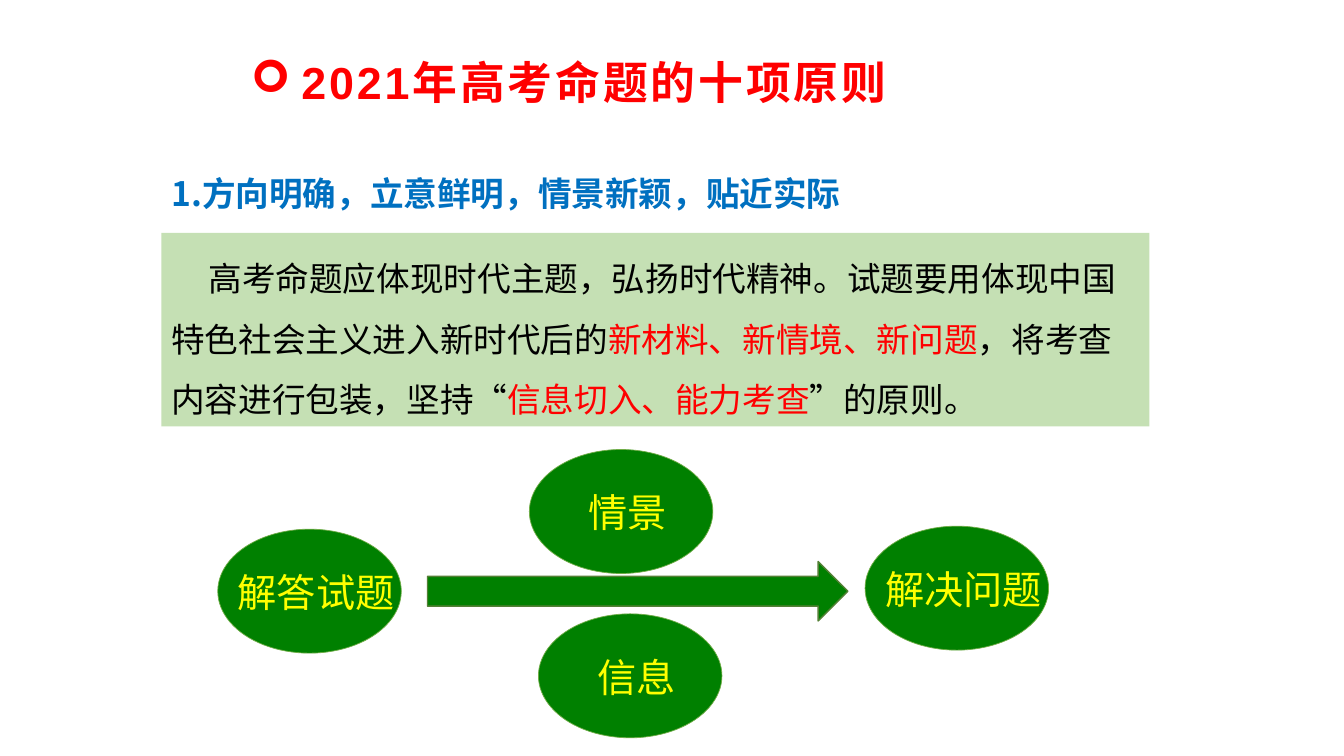
from lxml import etree
from pptx import Presentation
from pptx.dml.color import RGBColor
from pptx.enum.shapes import MSO_SHAPE as SHAPE
from pptx.enum.text import MSO_ANCHOR as ANCHOR, PP_ALIGN as ALIGN
from pptx.oxml.ns import qn
from pptx.util import Inches, Pt

RED = RGBColor(0xFF, 0x00, 0x00)
BLUE = RGBColor(0x00, 0x70, 0xC0)
BLACK = RGBColor(0x00, 0x00, 0x00)
YELLOW = RGBColor(0xFF, 0xFF, 0x00)
GREEN = RGBColor(0x00, 0x80, 0x00)
PALE_GREEN = RGBColor(0xC5, 0xE0, 0xB4)
OVAL_LINE = RGBColor(0x70, 0xAD, 0x47)
ARROW_LINE = RGBColor(0x53, 0x80, 0x35)
CJK = "Noto Sans CJK SC"

# Content
TITLE = "2021年高考命题的十项原则"
HEADING = "1.方向明确，立意鲜明，情景新颖，贴近实际"
BODY = [
    ("高考命题应体现时代主题，弘扬时代精神。试题要用体现中国特色社会主义进入新时代后的", BLACK),
    ("新材料、新情境、新问题", RED),
    ("，将考查内容进行包装，坚持“", BLACK),
    ("信息切入、能力考查", RED),
    ("”的原则。", BLACK),
]
OVAL_W, OVAL_H = 1.82, 1.23
# label, oval left, oval top, label offset from the oval, label width
OVALS = [
    ("情景", 5.25, 4.46, 0.49, 1.06),
    ("解答试题", 2.16, 5.25, 0.1, 1.85),
    ("解决问题", 8.58, 5.22, 0.1, 1.85),
    ("信息", 5.34, 6.09, 0.49, 1.06),
]


def style(r, size, color, font=CJK, bold=False):
    r.font.size, r.font.bold, r.font.name = Pt(size), bold, font
    r.font.color.rgb = color
    etree.SubElement(r.font._element, qn("a:ea"), typeface=CJK)


def add_text(shapes, box, text, size, color, **kw):
    tf = shapes.add_textbox(*map(Inches, box)).text_frame
    tf.word_wrap = True
    p = tf.paragraphs[0]
    p.text = text
    style(p.runs[0], size, color, **kw)
    return tf


def add_filled(shapes, kind, box, fill, line=None, width=1):
    sp = shapes.add_shape(kind, *map(Inches, box))
    sp.shadow.inherit = False
    sp.fill.solid()
    sp.fill.fore_color.rgb = fill
    if line is None:
        sp.line.fill.background()
    else:
        sp.line.color.rgb = line
        sp.line.width = Pt(width)
    return sp


prs = Presentation()
prs.slide_width, prs.slide_height = Inches(13.33), Inches(7.5)
s = prs.slides.add_slide(prs.slide_layouts[6])

# Title with arrow bullet
tf = add_text(s.shapes, (2.38, 0.37, 10.63, 0.88), TITLE, 32, RED, font="Arial", bold=True)
tf.vertical_anchor = ANCHOR.MIDDLE
tf.margin_left, tf.margin_right = Inches(0.11), Inches(0.08)
p = tf.paragraphs[0]
pPr = p._p.get_or_add_pPr()
pPr.set("marL", str(Inches(0.5)))
pPr.set("indent", str(-Inches(0.5)))
etree.SubElement(pPr, qn("a:buFont"), typeface="Wingdings")
etree.SubElement(pPr, qn("a:buChar"), char="➢")
p.runs[0].font._element.set("spc", "200")

# Heading
tf = add_text(s.shapes, (1.6, 1.47, 7.25, 0.71), HEADING, 24, BLUE, bold=True)
tf.paragraphs[0].line_spacing = 1.5

# Explanation panel
sp = add_filled(s.shapes, SHAPE.RECTANGLE, (1.6, 2.31, 9.8, 1.92), PALE_GREEN)
tf = sp.text_frame
tf.word_wrap = True
tf.vertical_anchor = ANCHOR.TOP
p = tf.paragraphs[0]
p.alignment = ALIGN.LEFT
p.line_spacing = 1.5
p._p.get_or_add_pPr().set("indent", str(Inches(0.37)))
for text, color in BODY:
    r = p.add_run()
    r.text = text
    style(r, 24, color)

# Diagram: arrow and labelled ovals
add_filled(s.shapes, SHAPE.RIGHT_ARROW, (4.24, 5.57, 4.17, 0.59), GREEN, ARROW_LINE)
for label, left, top, offset, width in OVALS:
    group = s.shapes.add_group_shape()
    add_filled(group.shapes, SHAPE.OVAL, (left, top, OVAL_W, OVAL_H), GREEN, OVAL_LINE, 0.5)
    add_text(group.shapes, (left + offset, top + 0.34, width, 0.57), label, 28, YELLOW,
             font="Calibri")

prs.save("out.pptx")
